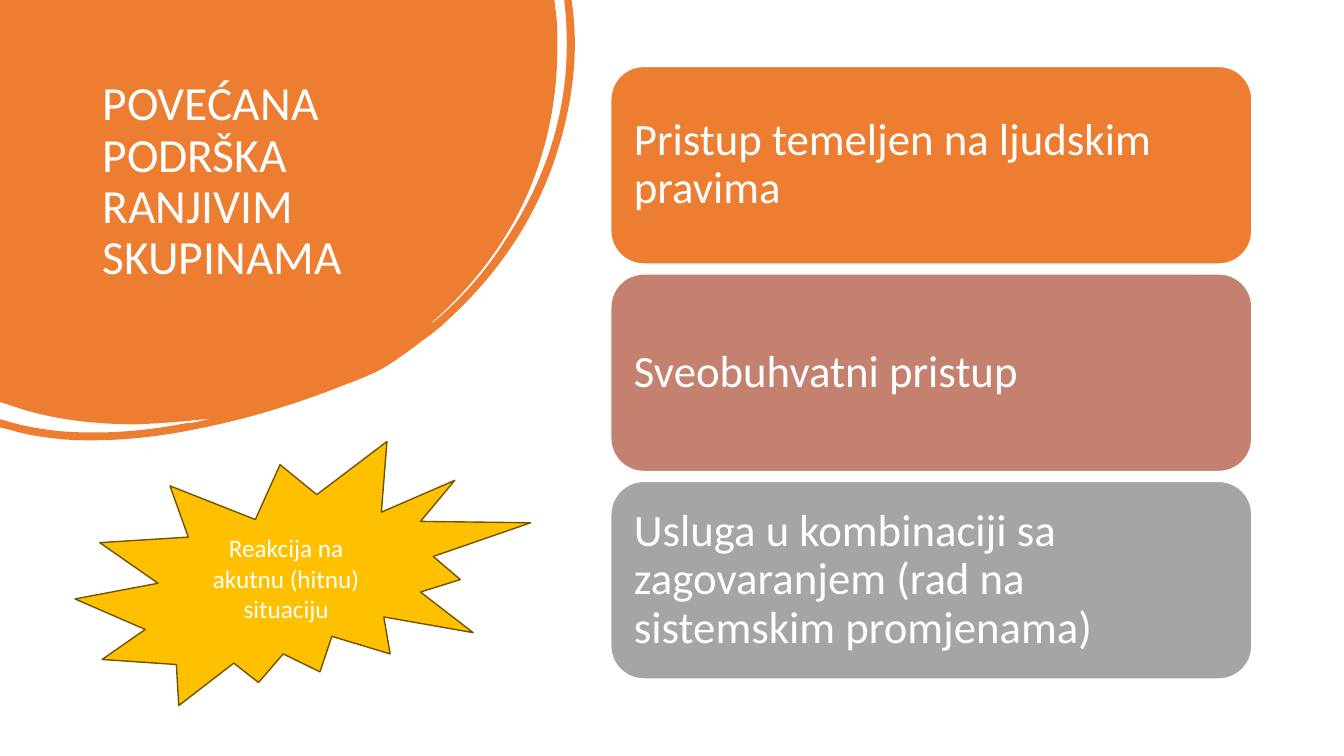
import lxml.etree
import pptx
import pptx.util
import pptx.dml.color
import pptx.enum.shapes
import pptx.enum.text
import pptx.oxml.ns

Pt = pptx.util.Pt
SHAPE = pptx.enum.shapes.MSO_SHAPE
ALIGN = pptx.enum.text.PP_ALIGN
ANCHOR = pptx.enum.text.MSO_ANCHOR
qn = pptx.oxml.ns.qn
INCH = 72

BLOB = [
    (0, 0), (5.5, 0), (5.52, 0.17),
    (5.53, 0.26, 5.53, 0.36, 5.53, 0.45),
    (5.53, 1.01, 5.42, 1.54, 5.18, 2.04),
    (4.96, 2.49, 4.65, 2.88, 4.27, 3.21),
    (4.29, 3.21, 4.3, 3.19, 4.32, 3.18),
    (4.59, 2.95, 4.82, 2.69, 5.01, 2.39),
    (5.43, 1.76, 5.65, 1.07, 5.62, 0.3),
    (5.62, 0.21, 5.61, 0.12, 5.6, 0.03),
    (5.6, 0), (5.67, 0), (5.68, 0.07),
    (5.74, 0.54, 5.68, 1.02, 5.53, 1.5),
    (5.33, 2.14, 4.97, 2.68, 4.48, 3.14),
    (4.39, 3.23, 4.29, 3.31, 4.19, 3.38),
    (4.09, 3.46, 3.99, 3.53, 3.87, 3.61),
    (3.75, 3.69, 3.6, 3.75, 3.44, 3.81),
    (2.99, 3.99, 2.52, 4.14, 2.03, 4.24),
    (1.57, 4.34, 1.1, 4.39, 0.63, 4.36),
    (0.45, 4.34, 0.28, 4.32, 0.12, 4.27),
    (0, 4.24), (0, 4.16), (0.04, 4.17),
    (0.23, 4.23, 0.42, 4.26, 0.61, 4.28),
    (1.03, 4.31, 1.43, 4.28, 1.84, 4.2),
    (1.89, 4.2, 1.93, 4.19, 1.98, 4.18),
    (2.02, 4.17, 2.06, 4.16, 2.1, 4.15),
    (1.86, 4.18, 1.61, 4.2, 1.36, 4.21),
    (0.92, 4.21, 0.48, 4.16, 0.07, 4.01),
    (0, 3.99),
]

CARDS = [
    ("Pristup temeljen na ljudskim pravima", "ED7D31"),
    ("Sveobuhvatni pristup", "C48170"),
    ("Usluga u kombinaciji sa zagovaranjem (rad na sistemskim promjenama)", "A5A5A5"),
]


def color(code):
    """Turn a hex string into a colour."""
    return pptx.dml.color.RGBColor.from_string(code)


def paint(shape, fill, line=None):
    """Set the fill and outline of a shape and drop its shadow."""
    shape.shadow.inherit = False
    shape.fill.solid()
    shape.fill.fore_color.rgb = color(fill)
    if line:
        shape.line.color.rgb = color(line)
        shape.line.width = Pt(1)
    else:
        shape.line.fill.background()


def write(shape, text, size, align=ALIGN.LEFT, space=None, inset=None, anchor=ANCHOR.MIDDLE):
    """Write one white paragraph into a shape."""
    frame = shape.text_frame
    frame.word_wrap = True
    frame.vertical_anchor = anchor
    if inset is not None:
        frame.margin_left = frame.margin_right = Pt(inset)
        frame.margin_top = frame.margin_bottom = Pt(inset)
    para = frame.paragraphs[0]
    para.alignment = align
    para.line_spacing = space
    run = para.add_run()
    run.text = text
    run.font.name = "Calibri"
    run.font.size = Pt(size)
    run.font.color.rgb = color("FFFFFF")


def scale(part):
    """Pair up the inch values of a part as lengths."""
    return [(Pt(x * INCH), Pt(y * INCH)) for x, y in zip(part[::2], part[1::2])]


def bend(shape, parts):
    """Turn the straight steps that have handles into cubic curves."""
    steps = list(shape.element.iter(qn("a:lnTo")))
    for step, part in zip(steps, parts):
        if len(part) == 2:
            continue
        curve = lxml.etree.Element(qn("a:cubicBezTo"))
        for x, y in scale(part):
            lxml.etree.SubElement(curve, qn("a:pt"), x=str(int(x)), y=str(int(y)))
        step.getparent().replace(step, curve)


def add_blob(slide, parts, width, height, fill):
    """Draw a closed curved outline from the slide's corner."""
    first, *rest = [scale(part)[-1] for part in parts]
    pen = slide.shapes.build_freeform(*first)
    pen.add_line_segments(rest, close=True)
    shape = pen.convert_to_shape()
    bend(shape, parts[1:])
    shape.width, shape.height = Pt(width), Pt(height)
    for path in shape.element.iter(qn("a:path")):
        path.set("w", str(int(shape.width)))
        path.set("h", str(int(shape.height)))
    paint(shape, fill)


def add_box(slide, kind, area, fill, line):
    """Add a preset shape at an area given in points."""
    shape = slide.shapes.add_shape(kind, *map(Pt, area))
    paint(shape, fill, line)
    return shape


def main():
    """Build the slide and save it."""
    deck = pptx.Presentation()
    deck.slide_width, deck.slide_height = Pt(960), Pt(540)
    slide = deck.slides.add_slide(deck.slide_layouts[6])

    add_blob(slide, BLOB, 411.1, 314.6, "ED7D31")
    title = slide.shapes.add_textbox(Pt(66.2), Pt(53.3), Pt(253.4), Pt(159.8))
    write(title, "POVEĆANA PODRŠKA RANJIVIM SKUPINAMA", 34, space=0.9, anchor=ANCHOR.TOP)

    for row, (text, fill) in enumerate(CARDS):
        area = (436.3, 47.5 + 148.2 * row, 457.9, 141.1)
        card = add_box(slide, SHAPE.ROUNDED_RECTANGLE, area, fill, "FFFFFF")
        write(card, text, 32, space=0.9, inset=9.6)

    burst = add_box(slide, SHAPE.EXPLOSION2, (53.6, 315.4, 325.4, 188.6), "FFC000", "705400")
    write(burst, "Reakcija na akutnu (hitnu) situaciju", 18, ALIGN.CENTER)

    deck.save("out.pptx")


if __name__ == "__main__":
    main()
